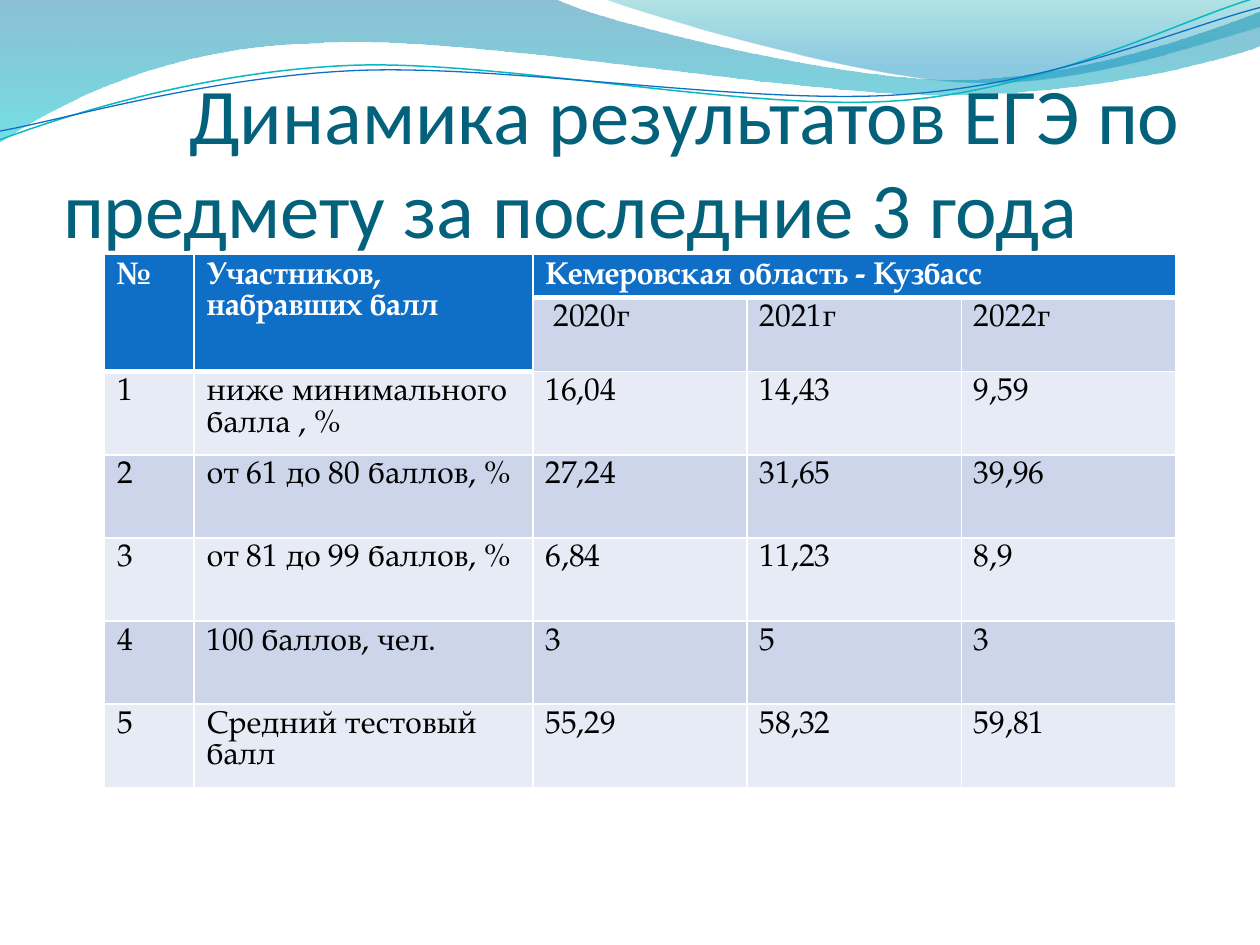
from lxml.etree import SubElement
from pptx import Presentation
from pptx.dml.color import RGBColor as RGB
from pptx.enum.text import MSO_ANCHOR as Anchor, MSO_AUTO_SIZE as Fit, PP_ALIGN as Align
from pptx.oxml.ns import qn
from pptx.util import Inches, Pt

HUE = {
    "deep": "0074A1", "aqua": "00C6CF", "teal": "00A1A9", "sky": "008BBF",
    "cyan": "0AB8BF", "blue": "0F6FC6", "title": "04617B",
    "white": "FFFFFF", "black": "000000", "dark": "CCD5EA", "pale": "E7EBF5",
}
TITLE = "\tДинамика результатов ЕГЭ по предмету за последние 3 года"
ROWS = [
    ["№", "Участников, набравших балл", "Кемеровская область - Кузбасс", "", ""],
    ["", "", " 2020г", "2021г", "2022г"],
    ["1", "ниже минимального балла , %", "16,04", "14,43", "9,59"],
    ["2", "от 61 до 80 баллов, %", "27,24", "31,65", "39,96"],
    ["3", "от 81 до 99 баллов, %", "6,84", "11,23", "8,9"],
    ["4", "100 баллов, чел.", "3", "5", "3"],
    ["5", "Средний тестовый балл", "55,29", "58,32", "59,81"],
]
WIDTHS = [0.71, 2.69] + [1.7] * 3
HEIGHTS = [0.34, 0.59] + [0.66] * 5
SPANS = [((0, 0), (1, 0)), ((0, 1), (1, 1)), ((0, 2), (0, 4))]

# A path is a list of points (2 numbers) and Bezier curves (6 numbers).
# Gradient stops are position, colour, opacity in percent.
WAVES = [
    {"path": [(0, 0), (4.4, -0.01), (4.76, 0.17, 6.64, 0.63, 7.58, 0.63),
              (8.53, 0.63, 9.58, 0.26, 10, 0.09), (10.01, 0.36),
              (9.83, 0.44, 8.7, 0.76, 7.46, 0.75), (6.22, 0.75, 3.82, 0.28, 2.57, 0.34),
              (1.29, 0.36, 0.46, 0.83, -0.01, 1.13)],
     "stops": [(0, "deep", 45), (1, "aqua", 55)]},
    {"path": [(4.79, -0.01), (5.09, 0.11, 6.82, 0.62, 7.69, 0.65),
              (8.56, 0.69, 9.61, 0.32, 10, 0.21), (10, 0)],
     "stops": [(0, "teal", 30), (0.8, "sky", 45)]},
    {"path": [(0, 1.11), (0.48, 0.93, 1.58, 0.57, 2.77, 0.52),
              (3.95, 0.47, 5.93, 0.89, 7.13, 0.8), (8.33, 0.71, 9.38, 0.15, 9.98, -0.02)],
     "line": ("cyan", 0.85)},
    {"path": [(0, 1.04), (0.47, 0.96, 1.64, 0.61, 2.83, 0.56),
              (4.03, 0.51, 5.97, 0.84, 7.17, 0.75), (8.36, 0.67, 9.41, 0.21, 10, 0.06)],
     "line": ("blue", 0.75)},
]
UNIT = 1000  # path units to the inch


def color(name):
    return RGB.from_string(HUE[name])


def style(item, **form):
    for key, value in form.items():
        setattr(item, key, value)


def bend(wave, path, left, top):
    """Turn the straight segments of a freeform into its Bezier curves."""
    for node, part in zip(list(wave.element.iter(qn("a:lnTo"))), path[1:]):
        if len(part) == 6:
            curve = SubElement(node.getparent(), qn("a:cubicBezTo"))
            for x, y in zip(part[::2], part[1::2]):
                SubElement(curve, qn("a:pt"), x=str(round((x - left) * UNIT)),
                           y=str(round((y - top) * UNIT)))
            node.getparent().replace(node, curve)


def add_wave(shapes, path, stops=None, line=None):
    pts = [(round(p[-2] * UNIT), round(p[-1] * UNIT)) for p in path]
    pen = shapes.build_freeform(*pts[0], scale=Inches(1) / UNIT)
    pen.add_line_segments(pts[1:], close=bool(stops))
    wave = pen.convert_to_shape()
    bend(wave, path, min(p[-2] for p in path), min(p[-1] for p in path))
    wave.shadow.inherit = False
    if line:
        wave.fill.background()
        wave.line.color.rgb = color(line[0])
        wave.line.width = Pt(line[1])
        return
    wave.line.fill.background()
    wave.fill.gradient()
    wave.fill.gradient_angle = 270
    for stop, (pos, name, _) in zip(wave.fill.gradient_stops, stops):
        stop.position = pos
        stop.color.rgb = color(name)
    for node, (_, _, part) in zip(wave.element.iter(qn("a:srgbClr")), stops):
        SubElement(node, qn("a:alpha"), val=str(part * 1000))


def add_edges(cell, head):
    props = cell._tc.get_or_add_tcPr()
    for side in "LRTB":
        width = 3 if head and side == "B" else 1
        edge = SubElement(props, qn(f"a:ln{side}"), w=str(Pt(width)))
        fill = SubElement(edge, qn("a:solidFill"))
        SubElement(fill, qn("a:srgbClr"), val=HUE["white"])


def add_grid(shapes):
    frame = shapes.add_table(len(ROWS), len(WIDTHS), Inches(0.83), Inches(2.02),
                             Inches(sum(WIDTHS)), Inches(sum(HEIGHTS)))
    grid = frame.table
    for col, width in zip(grid.columns, WIDTHS):
        col.width = Inches(width)
    for row, height in zip(grid.rows, HEIGHTS):
        row.height = Inches(height)
    for start, end in SPANS:
        grid.cell(*start).merge(grid.cell(*end))
    for r, row in enumerate(ROWS):
        for c, text in enumerate(row):
            cell = grid.cell(r, c)
            head = r == 0 or (r == 1 and c < 2)
            add_edges(cell, head)
            cell.fill.solid()
            cell.fill.fore_color.rgb = color("blue" if head else "dark" if r % 2 else "pale")
            style(cell, margin_left=Inches(0.1), margin_right=Inches(0.09),
                  margin_top=Inches(0.05), margin_bottom=0)
            para = cell.text_frame.paragraphs[0]
            para.line_spacing = Pt(18)
            if text:
                run = para.add_run()
                run.text = text
                style(run.font, size=Pt(18), name="TeX Gyre Pagella", bold=head)
                run.font.color.rgb = color("white" if head else "black")


def set_title(title):
    style(title, left=Inches(0.5), top=Inches(0.77), width=Inches(9), height=Inches(1.25))
    frame = title.text_frame
    frame.text = TITLE
    style(frame, auto_size=Fit.NONE, word_wrap=True, vertical_anchor=Anchor.BOTTOM,
          margin_left=0, margin_right=0, margin_top=Inches(0.05), margin_bottom=0)
    para = frame.paragraphs[0]
    para.alignment = Align.LEFT
    props = para._p.get_or_add_pPr()
    tabs = SubElement(props, qn("a:tabLst"))
    SubElement(tabs, qn("a:tab"), pos=str(Inches(1)), algn="l")
    style(para.runs[0].font, size=Pt(45), name="Calibri")
    para.runs[0].font.color.rgb = color("title")


def main():
    deck = Presentation()
    style(deck, slide_width=Inches(10), slide_height=Inches(7.5))
    slide = deck.slides.add_slide(deck.slide_layouts[5])
    shapes = slide.shapes
    for wave in WAVES:
        add_wave(shapes, **wave)
    title = shapes.title
    set_title(title)
    title.element.getparent().append(title.element)  # in front of the waves
    add_grid(shapes)
    deck.save("out.pptx")


if __name__ == "__main__":
    main()
